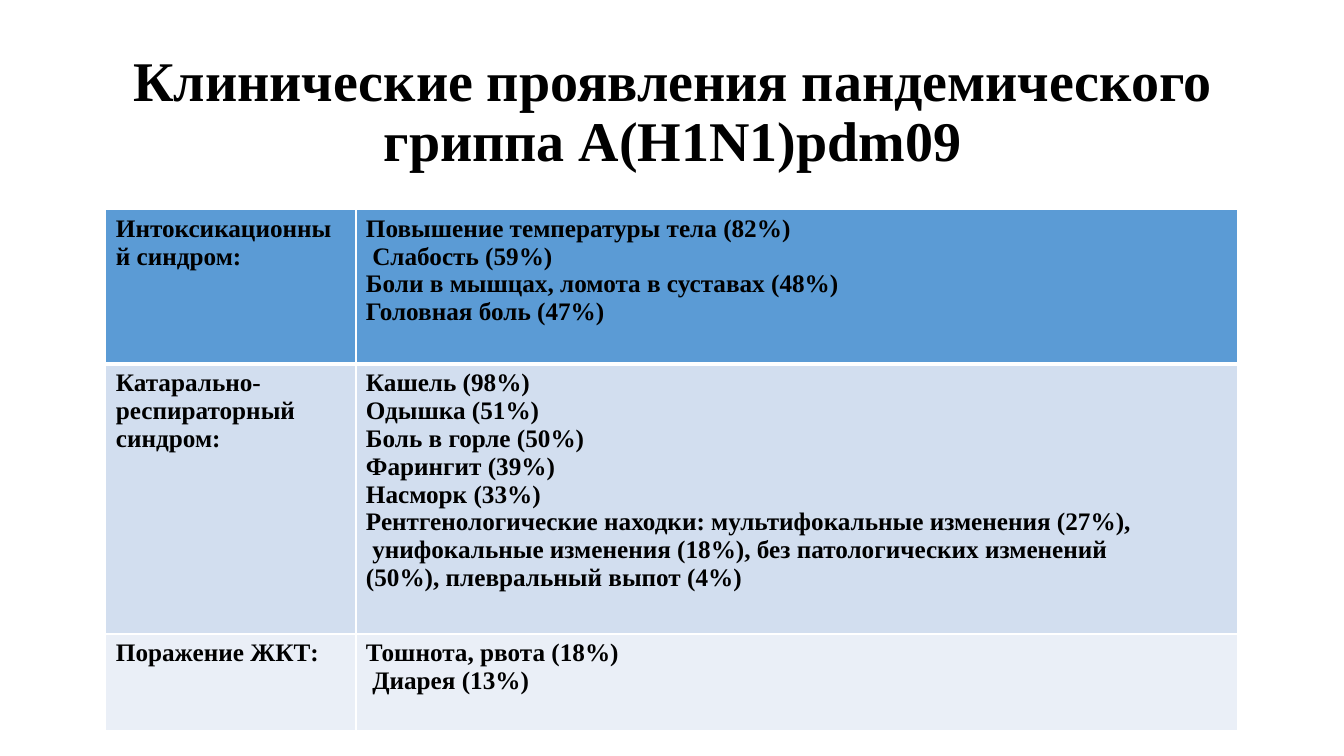
from lxml.etree import SubElement
from pptx import Presentation
from pptx.dml.color import RGBColor
from pptx.enum.text import MSO_ANCHOR as Anchor, PP_ALIGN as Align
from pptx.oxml.ns import qn
from pptx.util import Inches, Pt

FONT = "Times New Roman"
COLUMN_WIDTHS = (2.48, 8.74)
SYNDROMES = (
    ("Интоксикационный синдром:", 1.53, "5B9BD5", 3, (
        "Повышение температуры тела (82%)",
        " Слабость (59%)",
        "Боли в мышцах, ломота в суставах (48%)",
        "Головная боль (47%)",
    )),
    ("Катарально-респираторный синдром:", 2.68, "D2DEEF", 1, (
        "Кашель (98%)",
        "Одышка (51%)",
        "Боль в горле (50%)",
        "Фарингит (39%)",
        "Насморк (33%)",
        "Рентгенологические находки: мультифокальные изменения (27%),",
        " унифокальные изменения (18%), без патологических изменений",
        "(50%), плевральный выпот (4%)",
    )),
    ("Поражение ЖКТ:", 0.96, "EAEFF7", 1, (
        "Тошнота, рвота (18%)",
        " Диарея (13%)",
    )),
)


def color(hex_value):
    """Turn a hex string into a colour."""
    return RGBColor.from_string(hex_value)


def format_paragraph(paragraph, size):
    """Apply the slide's bold black type."""
    font = paragraph.font
    font.name, font.size, font.bold = FONT, Pt(size), True
    font.color.rgb = color("000000")


def add_borders(cell, top, bottom):
    """Draw white borders around a cell."""
    properties = cell._tc.get_or_add_tcPr()
    for side, width in (("L", 1), ("R", 1), ("T", top), ("B", bottom)):
        line = SubElement(properties, qn(f"a:ln{side}"), w=str(Pt(width)))
        fill = SubElement(line, qn("a:solidFill"))
        SubElement(fill, qn("a:srgbClr"), val="FFFFFF")


def fill_cell(cell, lines, background, top, bottom):
    """Write one paragraph per line into a bordered, filled cell."""
    cell.text = "\n".join(lines)
    for paragraph in cell.text_frame.paragraphs:
        format_paragraph(paragraph, 18)
    add_borders(cell, top, bottom)
    cell.fill.solid()
    cell.fill.fore_color.rgb = color(background)


def add_heading(slide, left, top, width, height):
    """Place the slide title in its box."""
    heading = slide.shapes.title
    heading.left, heading.top = Inches(left), Inches(top)
    heading.width, heading.height = Inches(width), Inches(height)
    frame = heading.text_frame
    frame.text = "Клинические проявления пандемического гриппа A(H1N1)pdm09"
    frame.word_wrap = True
    frame.vertical_anchor = Anchor.MIDDLE
    paragraph = frame.paragraphs[0]
    paragraph.alignment = Align.CENTER
    paragraph.line_spacing = 0.9
    format_paragraph(paragraph, 40)


def add_syndromes(slide, left, top):
    """Place the table of syndromes and their symptoms."""
    height = sum(row_height for _, row_height, *_ in SYNDROMES)
    table = slide.shapes.add_table(
        len(SYNDROMES), len(COLUMN_WIDTHS), Inches(left), Inches(top),
        Inches(sum(COLUMN_WIDTHS)), Inches(height)).table
    for column, width in zip(table.columns, COLUMN_WIDTHS):
        column.width = Inches(width)
    border_above = 1
    for row, syndrome in zip(table.rows, SYNDROMES):
        name, row_height, background, border_below, symptoms = syndrome
        row.height = Inches(row_height)
        for cell, lines in zip(row.cells, ((name,), symptoms)):
            fill_cell(cell, lines, background, border_above, border_below)
        border_above = border_below


def main():
    """Build and save the presentation."""
    presentation = Presentation()
    presentation.slide_width = Inches(13.33)
    presentation.slide_height = Inches(7.5)
    slide = presentation.slides.add_slide(presentation.slide_layouts[5])
    add_heading(slide, 0.92, 0.4, 11.5, 1.45)
    add_syndromes(slide, 1.05, 2.08)
    presentation.save("out.pptx")


if __name__ == "__main__":
    main()
